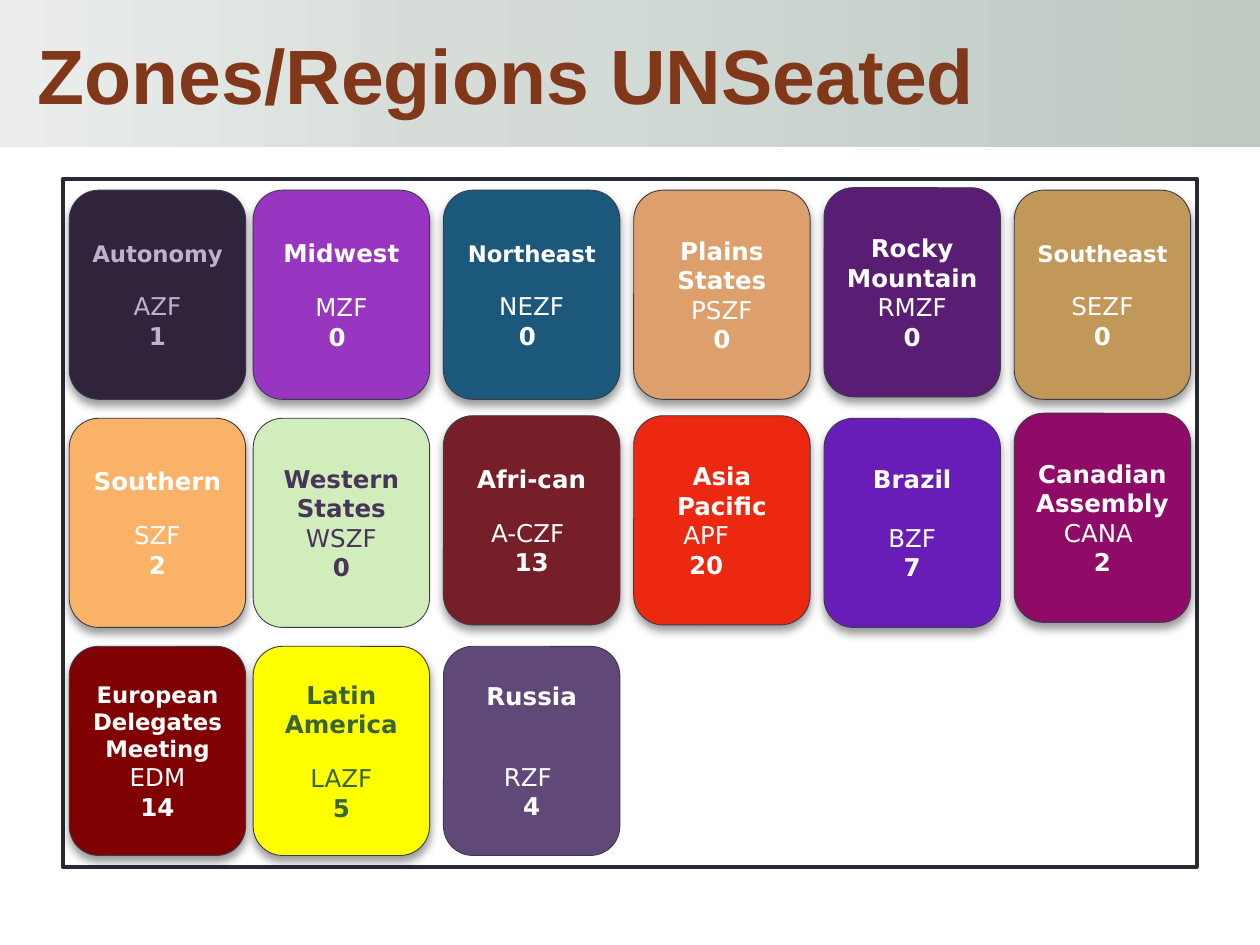
from copy import deepcopy
from collections import namedtuple

from lxml.etree import SubElement
from pptx import Presentation
from pptx.dml.color import RGBColor
from pptx.enum.shapes import MSO_SHAPE as SHAPE
from pptx.enum.text import MSO_ANCHOR as ANCHOR, PP_ALIGN as ALIGN
from pptx.oxml.ns import qn
from pptx.util import Inches, Pt

Box = namedtuple("Box", "x y w h")
Zone = namedtuple("Zone", "col row name code count fill ink size gap rise shadow indent",
                  defaults=("white", 14, 14, 0, True, 0))

COLORS = {
    "title": "81381A", "frame": "292934", "edge": "3B3B4B", "white": "FFFFFF",
    "band_dark": "BFCAC3", "band_mid": "D6DDD9", "band_light": "EBEEEC",
    "night": "30243C", "lilac": "BFB0CF", "orchid": "9836C2", "teal": "1B587C",
    "peach": "DDA06D", "plum": "591E74", "gold": "C19859", "apricot": "F9B268",
    "mint": "D1EDBB", "aubergine": "48365A", "wine": "771F28", "red": "ED2811",
    "violet": "691DB8", "magenta": "900B67", "maroon": "7F0101",
    "yellow": "FFFF00", "forest": "3B6432", "mauve": "604878",
}
ZONES = [
    Zone(0, 0, "Autonomy", "AZF", "1", "night", "lilac", size=13),
    Zone(1, 0, "Midwest", "MZF", "0 ", "orchid"),
    Zone(1, 1, "Western States", "WSZF", "0", "mint", "aubergine", gap=0, shadow=False),
    Zone(0, 1, "Southern", "SZF", "2", "apricot"),
    Zone(0, 2, "European\nDelegates\nMeeting", "EDM", "14", "maroon", size=13, gap=0),
    Zone(2, 2, "Russia", "RZF ", "4", "mauve", gap=29, shadow=False),
    Zone(1, 2, "Latin America", "LAZF", "5", "yellow", "forest"),
    Zone(2, 1, "Afri-can", "A-CZF ", "13", "wine", rise=0.02),
    Zone(3, 1, "Asia Pacific", "APF", "20", "red", gap=0, rise=0.02, indent=0.25),
    Zone(4, 1, "Brazil", "BZF", "7", "violet", gap=17),
    Zone(5, 1, "Canadian Assembly", "CANA ", "2", "magenta", gap=0, rise=0.04),
    Zone(2, 0, "Northeast", "NEZF", "0 ", "teal", size=13),
    Zone(3, 0, "Plains States", "PSZF", "0", "peach", gap=0),
    Zone(4, 0, "Rocky Mountain", "RMZF", "0", "plum", gap=0, rise=0.02),
    Zone(5, 0, "Southeast", "SEZF", "0", "gold", size=13),
]


def rgb(name):
    return RGBColor.from_string(COLORS[name])


def add_box(shapes, kind, box, fill=None, line=None, width=0):
    sp = shapes.add_shape(kind, *(Inches(v) for v in box))
    sp.shadow.inherit = False
    if fill:
        sp.fill.solid()
        sp.fill.fore_color.rgb = rgb(fill)
    if line:
        sp.line.color.rgb = rgb(line)
        sp.line.width = Pt(width)
    else:
        sp.line.fill.background()
    return sp


def add_run(p, text, ink, **fmt):
    r = p.add_run()
    r.text = text
    r.font.color.rgb = rgb(ink)
    for key, value in fmt.items():
        setattr(r.font, key, value)


def add_shadow(sp):
    effects = sp._element.spPr.find(qn("a:effectLst"))
    shadow = SubElement(effects, qn("a:outerShdw"), blurRad=str(Pt(5.2)),
                        dist=str(Pt(3)), dir="5400000", rotWithShape="0")
    tint = SubElement(shadow, qn("a:srgbClr"), val="000000")
    SubElement(tint, qn("a:alpha"), val="40000")


def title_band(shapes, box):
    sp = add_box(shapes, SHAPE.RECTANGLE, box)
    sp.fill.gradient()
    sp.fill.gradient_angle = 180
    stops = sp._element.spPr.find(qn("a:gradFill")).find(qn("a:gsLst"))
    stops.append(deepcopy(stops[-1]))
    shades = [(0, "band_dark"), (0.65, "band_mid"), (1, "band_light")]
    for stop, (pos, shade) in zip(sp.fill.gradient_stops, shades):
        stop.position = pos
        stop.color.rgb = rgb(shade)
    tf = sp.text_frame
    tf.vertical_anchor = ANCHOR.MIDDLE
    tf.margin_left = Inches(0.3)
    p = tf.paragraphs[0]
    p.alignment = ALIGN.LEFT
    add_run(p, "Zones/Regions UNSeated", "title", name="Arial", size=Pt(44), bold=True)


def zone_card(shapes, box, zone):
    sp = add_box(shapes, SHAPE.ROUNDED_RECTANGLE, box, zone.fill, "edge", 0.5)
    if zone.shadow:
        add_shadow(sp)
    tf = sp.text_frame
    tf.word_wrap = True
    tf.vertical_anchor = ANCHOR.MIDDLE
    lines = [(name, zone.size, True) for name in zone.name.split("\n")]
    lines += [(zone.code, 14, False), (zone.count, 14, True)]
    for i, (text, size, bold) in enumerate(lines):
        p = tf.paragraphs[0] if i == 0 else tf.add_paragraph()
        p.alignment = ALIGN.CENTER
        if text == zone.code:
            p.space_before = Pt(zone.gap)
            if zone.indent:
                p._p.get_or_add_pPr().set("marR", str(Inches(zone.indent)))
        add_run(p, text, zone.ink, name="DejaVu Sans", size=Pt(size), bold=bold)


def zone_grid(shapes, box):
    add_box(shapes, SHAPE.RECTANGLE, box, "white", "frame", 2.25)
    card_w, card_h, edge = 1.4, 1.66, 0.05
    col_step, row_step = 1.51, 1.81
    last_left = box.x + box.w - edge - card_w
    for zone in ZONES:
        x = last_left - (5 - zone.col) * col_step if zone.col else box.x + edge
        y = box.y + 0.09 + zone.row * row_step - zone.rise
        zone_card(shapes, Box(x, y, card_w, card_h), zone)


def main():
    prs = Presentation()
    prs.slide_width, prs.slide_height = Inches(10), Inches(7.5)
    s = prs.slides.add_slide(prs.slide_layouts[6])
    title_band(s.shapes, Box(0, 0, 10, 1.17))
    zone_grid(s.shapes.add_group_shape().shapes, Box(0.5, 1.42, 9, 5.46))
    prs.save("out.pptx")


if __name__ == "__main__":
    main()
